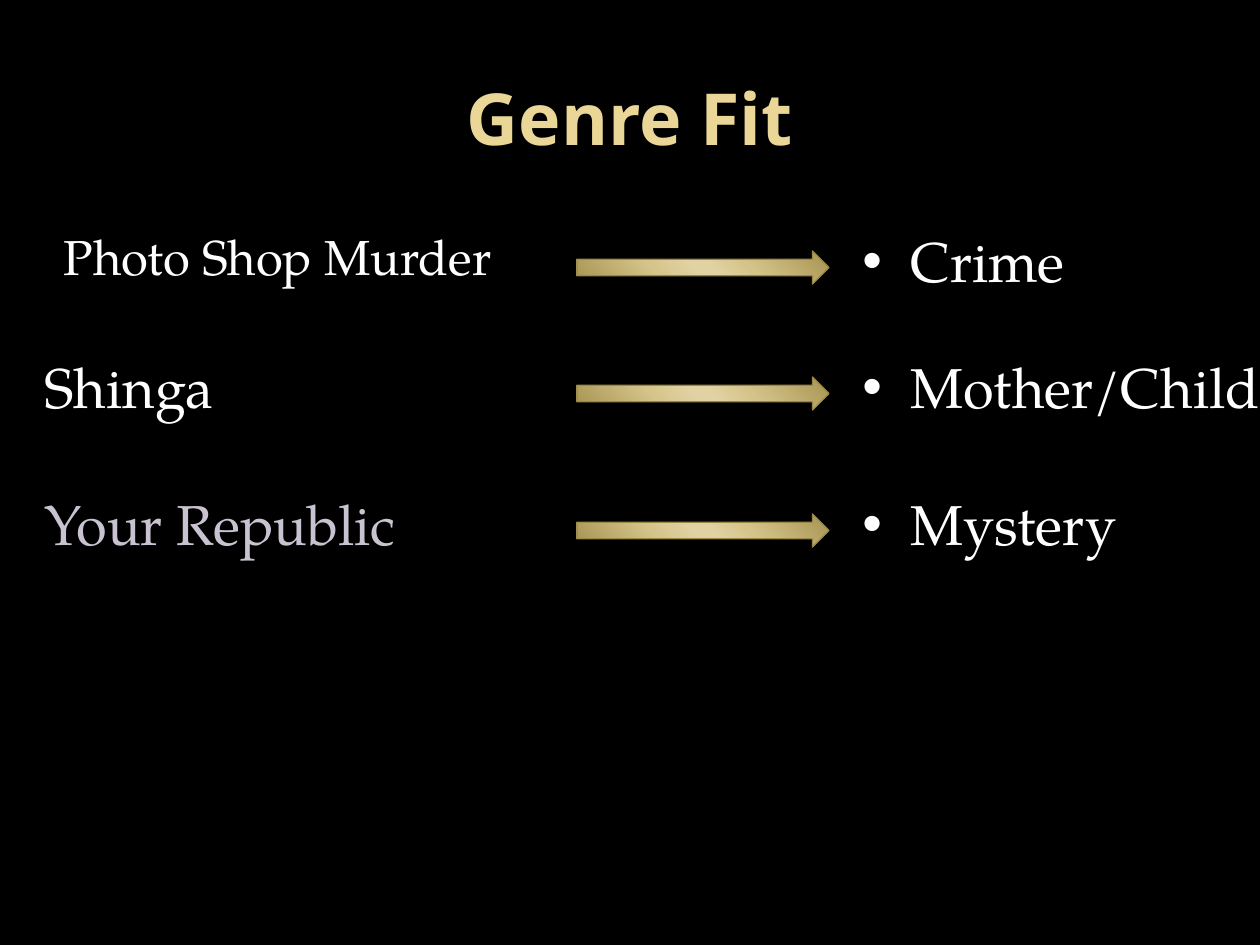
"""Build the Genre Fit slide, which pairs each title with its genre."""
from dataclasses import dataclass

from lxml.etree import SubElement
from pptx import Presentation
from pptx.dml.color import RGBColor as Color
from pptx.enum.shapes import MSO_SHAPE as Preset
from pptx.enum.text import MSO_ANCHOR as Anchor, MSO_AUTO_SIZE as AutoSize, PP_ALIGN as Align
from pptx.oxml.ns import qn
from pptx.util import Emu, Pt


@dataclass(frozen=True)
class Theme:
    background: str = "000000"
    heading: str = "EAD696"
    text: str = "FFFFFF"
    muted: str = "C9C2D1"
    arrow_line: str = "998946"
    arrow_stops: tuple = ((0, "A59452"), (33, "D5C489"), (47, "E1D2A3"),
                          (53, "E1D2A3"), (68, "D6C58A"), (100, "A59452"))
    arrow_angle: int = 139
    heading_font: str = "Open Sans"
    text_font: str = "TeX Gyre Pagella"
    heading_size: int = 41
    text_size: int = 32
    small_size: int = 28


theme = Theme()
PX = 914400 / 126


def place(shape, left, top, width, height):
    shape.left, shape.top = Emu(round(left * PX)), Emu(round(top * PX))
    shape.width, shape.height = Emu(round(width * PX)), Emu(round(height * PX))


def write(shape, text, font, size, color, margin=0, indent=0, bullet=None, before=0):
    frame = shape.text_frame
    frame.word_wrap = True
    frame.auto_size = AutoSize.NONE
    paragraph = frame.paragraphs[0]
    paragraph.space_before = Pt(before)
    properties = paragraph._p.get_or_add_pPr()
    properties.set("marL", str(round(margin * PX)))
    properties.set("indent", str(round(indent * PX)))
    if bullet:
        SubElement(properties, qn("a:buFont")).set("typeface", "Arial")
        SubElement(properties, qn("a:buChar")).set("char", bullet)
    else:
        SubElement(properties, qn("a:buNone"))
    run = paragraph.add_run()
    run.text = text
    run.font.name = font
    run.font.size = Pt(size)
    run.font.color.rgb = Color.from_string(color)
    return paragraph


presentation = Presentation()
presentation.slide_width = Emu(round(1260 * PX))
presentation.slide_height = Emu(round(945 * PX))
slide = presentation.slides.add_slide(presentation.slide_layouts[1])
slide.background.fill.solid()
slide.background.fill.fore_color.rgb = Color.from_string(theme.background)

title = slide.shapes.title
place(title, 63, 38, 1134, 158)
title.text_frame.vertical_anchor = Anchor.MIDDLE
heading = write(title, "Genre Fit", theme.heading_font, theme.heading_size, theme.heading)
heading.alignment = Align.CENTER
heading.runs[0].font.bold = True

rows = (
    (220, "Photo Shop Murder", theme.small_size, theme.text, 76, -57, 6, "Crime"),
    (346, "Shinga", theme.text_size, theme.text, 0, 0, 0, "Mother/Child"),
    (483, "Your Republic", theme.text_size, theme.muted, 48, -48, 24, "Mystery"),
)
for number, (top, name, size, color, margin, indent, before, genre) in enumerate(rows):
    label = slide.placeholders[1] if number == 0 else slide.shapes.add_textbox(0, 0, 0, 0)
    place(label, 32, top, 546, 84)
    write(label, name, theme.text_font, size, color, margin, indent, before=before)

    arrow = slide.shapes.add_shape(Preset.RIGHT_ARROW, 0, 0, 0, 0)
    place(arrow, 577, top + 31, 252, 33)
    arrow.shadow.inherit = False
    arrow.line.color.rgb = Color.from_string(theme.arrow_line)
    arrow.line.width = Pt(0.75)
    arrow.fill.gradient()
    gradient = arrow._element.spPr.find(qn("a:gradFill"))
    for child in list(gradient):
        gradient.remove(child)
    stops = SubElement(gradient, qn("a:gsLst"))
    for position, shade in theme.arrow_stops:
        stop = SubElement(stops, qn("a:gs"), pos=str(position * 1000))
        SubElement(stop, qn("a:srgbClr"), val=shade)
    SubElement(gradient, qn("a:lin"), ang=str(theme.arrow_angle * 60000), scaled="0")

    answer = slide.shapes.add_textbox(0, 0, 0, 0)
    place(answer, 850, top, 546, 84)
    write(answer, genre, theme.text_font, theme.text_size, theme.text, 48, -48, "•", 6)

presentation.save("out.pptx")
